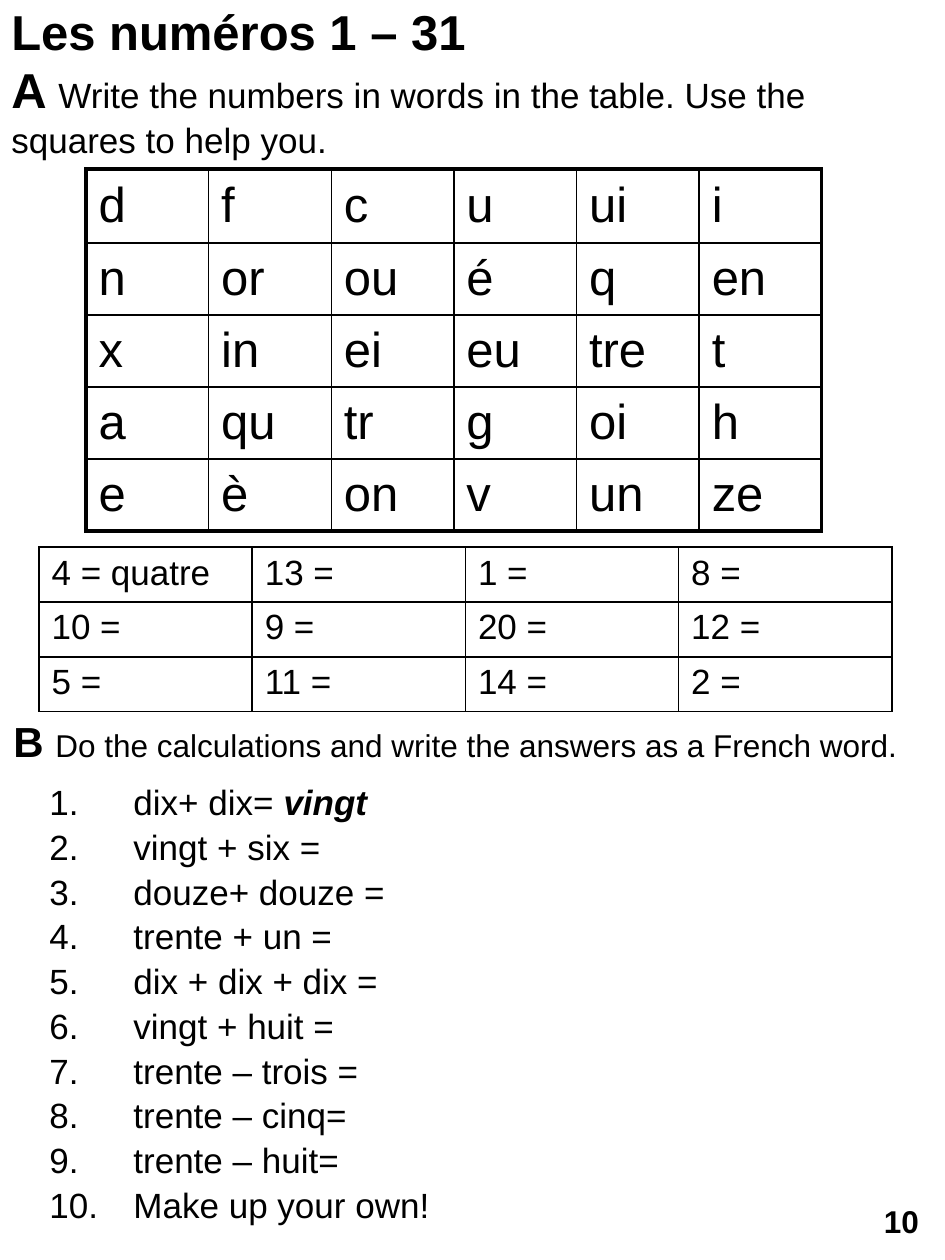
from lxml import etree
from pptx import Presentation
from pptx import util as u
from pptx.dml.color import RGBColor
from pptx.enum import shapes, text
from pptx.oxml.ns import qn

BLACK = RGBColor(0, 0, 0)
THIN, THICK = 1, 2.25

LETTERS = [
    "d f c u ui i".split(),
    "n or ou é q en".split(),
    "x in ei eu tre t".split(),
    "a qu tr g oi h".split(),
    "e è on v un ze".split(),
]
NUMBERS = [
    ["4 = quatre", "13 =", "1 =", "8 ="],
    ["10 =", "9 =", "20 =", "12 ="],
    ["5 =", "11 =", "14 =", "2 ="],
]
CALCULATIONS = [
    "vingt + six =", "douze+ douze =", "trente + un =", "dix + dix + dix =",
    "vingt + huit =", "trente – trois =", "trente – cinq=", "trente – huit=",
    "Make up your own!",
]


def px(length):
    return u.Emu(length * 914400 // 126)


def apply(target, values):
    for name, value in values.items():
        setattr(target, name, value)


def add_xml(parent, tag, **attributes):
    return etree.SubElement(parent, qn(tag), attributes)


class Worksheet:
    font = {"name": "Arial", "bold": False, "italic": False}

    def __init__(self, page):
        self.page = page

    def add_spans(self, para, spans, before=0, numbered=False):
        if numbered:
            para.line_spacing = 0.9
        props = para._p.get_or_add_pPr()
        if before:
            add_xml(add_xml(props, "a:spcBef"), "a:spcPct", val=str(before * 1000))
        if numbered:
            indent = px(84)
            props.set("marL", str(indent))
            props.set("indent", str(-indent))
            add_xml(props, "a:buFont", typeface="Arial")
            add_xml(props, "a:buAutoNum", type="arabicPeriod")
        for words, size, style in spans:
            if words == "\n":
                para.add_line_break()
                continue
            span = para.add_run()
            span.text = words
            apply(span.font, {**self.font, "size": u.Pt(size), **style})
            span.font.color.rgb = BLACK

    def text(self, place, paragraphs, before, numbered=False, grow=False):
        frame = self.page.shapes.add_textbox(*map(px, place)).text_frame
        fit = text.MSO_AUTO_SIZE.SHAPE_TO_FIT_TEXT if grow else text.MSO_AUTO_SIZE.NONE
        apply(frame, {"word_wrap": True, "auto_size": fit})
        for index, spans in enumerate(paragraphs):
            para = frame.add_paragraph() if index else frame.paragraphs[0]
            self.add_spans(para, spans, before, numbered)

    def border(self, cell, sides):
        props = cell._tc.get_or_add_tcPr()
        for side, width in sides.items():
            line = add_xml(props, f"a:ln{side}", w=str(u.Pt(width)))
            add_xml(add_xml(line, "a:solidFill"), "a:srgbClr", val=str(BLACK))

    def table(self, place, rows, heights, size, outer, anchor, before=0):
        last_row, last_column = len(rows) - 1, len(rows[0]) - 1
        table = self.page.shapes.add_table(
            last_row + 1, last_column + 1, *map(px, place)).table
        apply(table, {"first_row": False, "horz_banding": False})
        for column in table.columns:
            column.width = px(place[2]) // (last_column + 1)
        for r, (words, height) in enumerate(zip(rows, heights)):
            table.rows[r].height = px(height)
            for c, word in enumerate(words):
                cell = table.cell(r, c)
                cell.vertical_anchor = anchor
                self.border(cell, {
                    "L": THIN if c else outer,
                    "R": outer if c == last_column else THIN,
                    "T": THIN if r else outer,
                    "B": outer if r == last_row else THIN,
                })
                cell.fill.background()
                self.add_spans(cell.text_frame.paragraphs[0], [(word, size, {})], before)

    def page_number(self, place, number):
        box = self.page.shapes.add_shape(
            shapes.MSO_SHAPE.ROUNDED_RECTANGLE, *map(px, place))
        box.shadow.inherit = False
        box.fill.background()
        box.line.fill.background()
        box.text_frame.vertical_anchor = text.MSO_ANCHOR.MIDDLE
        para = box.text_frame.paragraphs[0]
        para.alignment = text.PP_ALIGN.CENTER
        self.add_spans(para, [(number, 18, {"bold": True})])


def main():
    deck = Presentation()
    apply(deck, {"slide_width": px(945), "slide_height": px(1260)})
    sheet = Worksheet(deck.slides.add_slide(deck.slide_layouts[6]))
    bold = {"bold": True}

    sheet.text((-1, -5, 935, 174), [[
        ("Les numéros 1 – 31", 28, bold), ("\n", 28, bold), ("A ", 28, bold),
        ("Write the numbers in words in the table. "
         "Use the squares to help you.", 20, {}),
    ]], before=50, grow=True)
    sheet.table((86, 169, 736, 362), LETTERS, [74] + [72] * 4, 28, THICK,
                text.MSO_ANCHOR.MIDDLE, before=20)
    sheet.table((39, 547, 853, 164), NUMBERS, [55, 55, 54], 20, THIN,
                text.MSO_ANCHOR.TOP)

    first = [("dix+ dix= ", 20, {}), ("vingt", 20, {"bold": True, "italic": True})]
    others = [[(line, 20, {})] for line in CALCULATIONS]
    sheet.text((37, 779, 1181, 753), [first] + others, before=20, numbered=True)
    sheet.text((1, 709, 944, 63), [[
        ("B ", 24, bold),
        ("Do the calculations and write the answers as a French word.", 18, {}),
    ]], before=50, grow=True)
    sheet.page_number((867, 1191, 69, 59), "10")
    deck.save("out.pptx")


if __name__ == "__main__":
    main()
